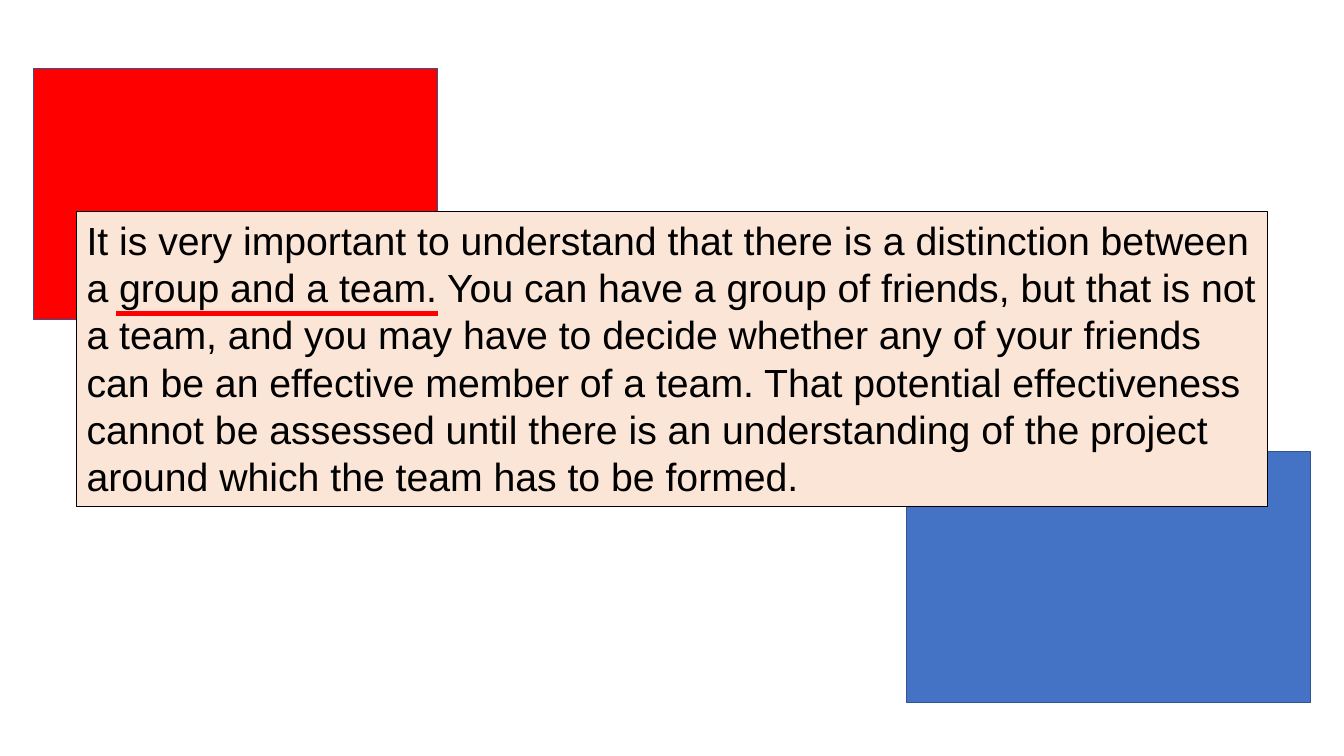
from pptx import Presentation
from pptx.dml.color import RGBColor
from pptx.enum.shapes import MSO_CONNECTOR, MSO_SHAPE
from pptx.enum.text import MSO_AUTO_SIZE
from pptx.oxml.ns import qn
from pptx.util import Pt
from lxml.etree import SubElement

PX = 9144
SLIDE_SIZE = (1333, 750)
STATEMENT = (
    "It is very important to understand that there is a distinction between "
    "a group and a team. You can have a group of friends, but that is not "
    "a team, and you may have to decide whether any of your friends "
    "can be an effective member of a team. That potential effectiveness "
    "cannot be assessed until there is an understanding of the project "
    "around which the team has to be formed."
)
BLOCK_SIZE = (401, 249)
BLOCKS = [((899, 448), "4472C4"), ((33, 68), "FF0000")]
STATEMENT_BOX = (76, 210, 1181, 293)
UNDERLINE = (115, 311, 434, 311)
FRAME_FORMAT = {"word_wrap": True, "auto_size": MSO_AUTO_SIZE.SHAPE_TO_FIT_TEXT}
FONT_FORMAT = {"name": "Arial", "size": Pt(28)}


def color(value):
    return RGBColor.from_string(value)


def emu(lengths):
    return [length * PX for length in lengths]


def paint(panel, fill, line, width):
    panel.fill.solid()
    panel.fill.fore_color.rgb = color(fill)
    outline(panel, line, width)


def outline(item, line, width):
    item.line.color.rgb = color(line)
    item.line.width = Pt(width)


def apply_format(target, values):
    for attribute, value in values.items():
        setattr(target, attribute, value)


def main():
    deck = Presentation()
    deck.slide_width, deck.slide_height = emu(SLIDE_SIZE)
    shapes = deck.slides.add_slide(deck.slide_layouts[6]).shapes

    for corner, fill in BLOCKS:
        block = shapes.add_shape(MSO_SHAPE.RECTANGLE, *emu(corner + BLOCK_SIZE))
        block.shadow.inherit = False
        paint(block, fill, "325491", 1)

    statement = shapes.add_textbox(*emu(STATEMENT_BOX))
    paint(statement, "FBE5D6", "000000", 0.75)
    apply_format(statement.text_frame, FRAME_FORMAT)
    wording = statement.text_frame.paragraphs[0].add_run()
    wording.text = STATEMENT
    apply_format(wording.font, FONT_FORMAT)
    wording.font.color.rgb = color("000000")

    underline = shapes.add_connector(MSO_CONNECTOR.STRAIGHT, *emu(UNDERLINE))
    outline(underline, "FF0000", 3)
    SubElement(underline._element.spPr, qn("a:effectLst"))

    deck.save("out.pptx")


if __name__ == "__main__":
    main()
